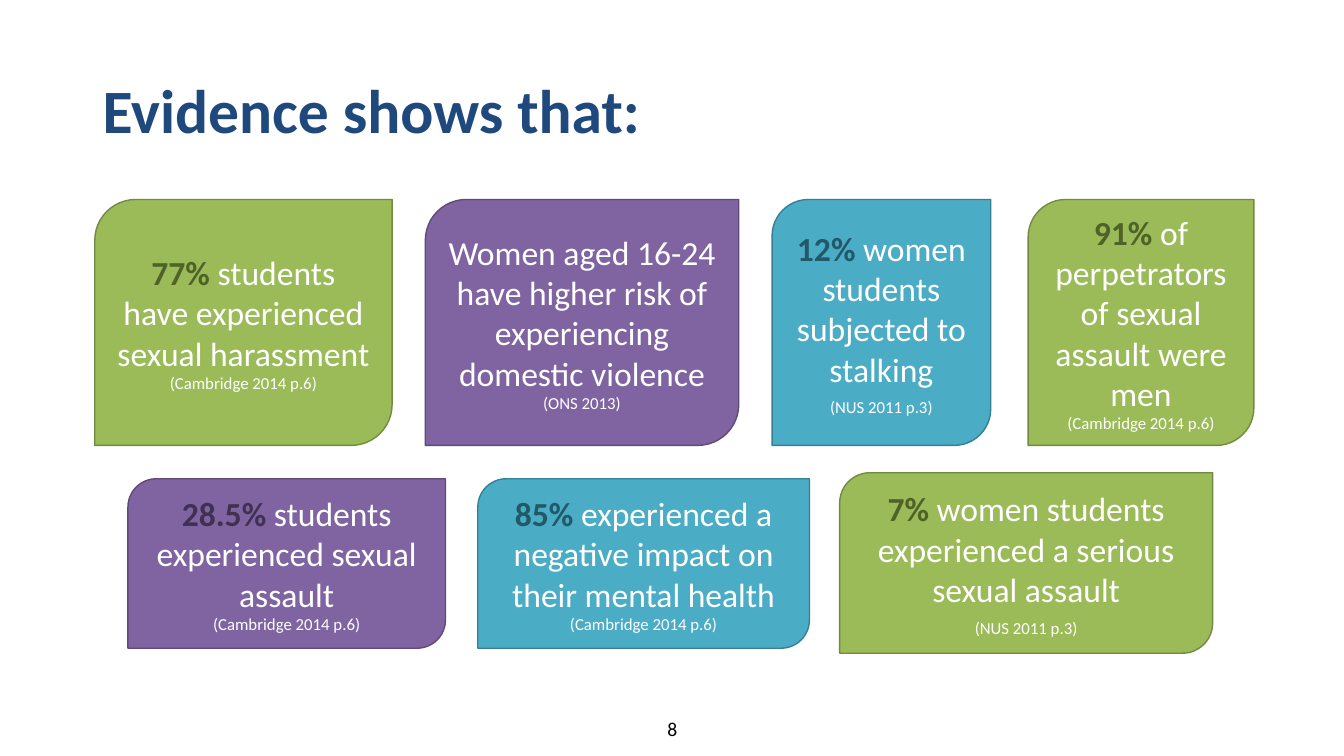
from dataclasses import dataclass

from pptx import Presentation
from pptx.dml.color import RGBColor
from pptx.enum.shapes import MSO_SHAPE
from pptx.enum.text import MSO_ANCHOR as Anchor, PP_ALIGN as Align
from pptx.slide import Slide
from pptx.text.text import TextFrame, _Paragraph as Paragraph
from pptx.util import Pt

FONT = "Calibri"
WHITE = RGBColor(0xFF, 0xFF, 0xFF)
BLACK = RGBColor(0x00, 0x00, 0x00)
NAVY = RGBColor(0x1F, 0x49, 0x7D)


@dataclass(frozen=True)
class Theme:
    fill: RGBColor
    outline: RGBColor
    figure: RGBColor


GREEN = Theme(RGBColor(0x9B, 0xBB, 0x59), RGBColor(0x73, 0x8A, 0x42), RGBColor(0x4F, 0x62, 0x28))
PURPLE = Theme(RGBColor(0x80, 0x64, 0xA2), RGBColor(0x5F, 0x4A, 0x78), RGBColor(0x40, 0x31, 0x52))
TEAL = Theme(RGBColor(0x4B, 0xAC, 0xC6), RGBColor(0x37, 0x7F, 0x92), RGBColor(0x21, 0x59, 0x68))


@dataclass(frozen=True)
class Finding:
    left: float
    width: float
    theme: Theme
    figure: str
    claim: str
    citation: str
    citation_gap: float = 0


@dataclass(frozen=True)
class Band:
    """Findings that share a top edge and a height."""
    top: float
    height: float
    findings: tuple[Finding, ...]


CAMBRIDGE = "(Cambridge 2014 p.6)"
NUS = "(NUS 2011 p.3)"

BANDS = (
    Band(142.5, 175.7, (
        Finding(67.7, 212.4, GREEN, "77% ", "students have experienced sexual harassment", CAMBRIDGE),
        Finding(303.8, 223.9, PURPLE, "",
                "Women aged 16-24 have higher risk of experiencing domestic violence", "(ONS 2013)"),
        Finding(551.5, 156.2, TEAL, "12% ", "women students subjected to stalking", NUS, 6),
        Finding(734.4, 161.3, GREEN, "91% ", "of perpetrators of sexual assault were men", CAMBRIDGE),
    )),
    Band(342, 121, (
        Finding(91.4, 226.8, PURPLE, "28.5% ", "students experienced sexual assault", CAMBRIDGE),
        Finding(341.3, 236.9, TEAL, "85% ", "experienced a negative impact on their mental health", CAMBRIDGE),
    )),
    Band(337.7, 128.9, (
        Finding(599.8, 266.4, GREEN, "7% ", "women students experienced a serious sexual assault", NUS, 6),
    )),
)


def add_text(paragraph: Paragraph, text: str, *, size: float, color: RGBColor,
             bold: bool = False, align: Align = Align.CENTER) -> None:
    paragraph.alignment = align
    run = paragraph.add_run()
    run.text = text
    run.font.name = FONT
    run.font.size = Pt(size)
    run.font.bold = bold
    run.font.color.rgb = color


def add_box(slide: Slide, left: float, top: float, width: float, height: float,
            anchor: Anchor) -> TextFrame:
    frame = slide.shapes.add_textbox(Pt(left), Pt(top), Pt(width), Pt(height)).text_frame
    frame.word_wrap = True
    frame.vertical_anchor = anchor
    return frame


def add_finding(slide: Slide, band: Band, finding: Finding) -> None:
    card = slide.shapes.add_shape(
        MSO_SHAPE.ROUND_2_DIAG_RECTANGLE,
        Pt(finding.left), Pt(band.top), Pt(finding.width), Pt(band.height))
    card.shadow.inherit = False
    card.fill.solid()
    card.fill.fore_color.rgb = finding.theme.fill
    card.line.color.rgb = finding.theme.outline
    card.line.width = Pt(1)

    frame = card.text_frame
    frame.word_wrap = True
    frame.vertical_anchor = Anchor.MIDDLE
    statement = frame.paragraphs[0]
    if finding.figure:
        add_text(statement, finding.figure, size=24, color=finding.theme.figure, bold=True)
    add_text(statement, finding.claim, size=24, color=WHITE)
    citation = frame.add_paragraph()
    citation.space_before = Pt(finding.citation_gap)
    add_text(citation, finding.citation, size=12, color=WHITE)


def main() -> None:
    deck = Presentation()
    deck.slide_width, deck.slide_height = Pt(960), Pt(540)
    slide = deck.slides.add_slide(deck.slide_layouts[6])

    heading = add_box(slide, 66.2, 28.8, 828, 104.4, Anchor.MIDDLE).paragraphs[0]
    heading.line_spacing = 0.9
    add_text(heading, "Evidence shows that:", size=44, color=NAVY, bold=True, align=Align.LEFT)

    for band in BANDS:
        for finding in band.findings:
            add_finding(slide, band, finding)

    page_number = add_box(slide, 66.2, 508.3, 828, 25.2, Anchor.TOP).paragraphs[0]
    add_text(page_number, "8", size=14, color=BLACK)

    deck.save("out.pptx")


if __name__ == "__main__":
    main()
